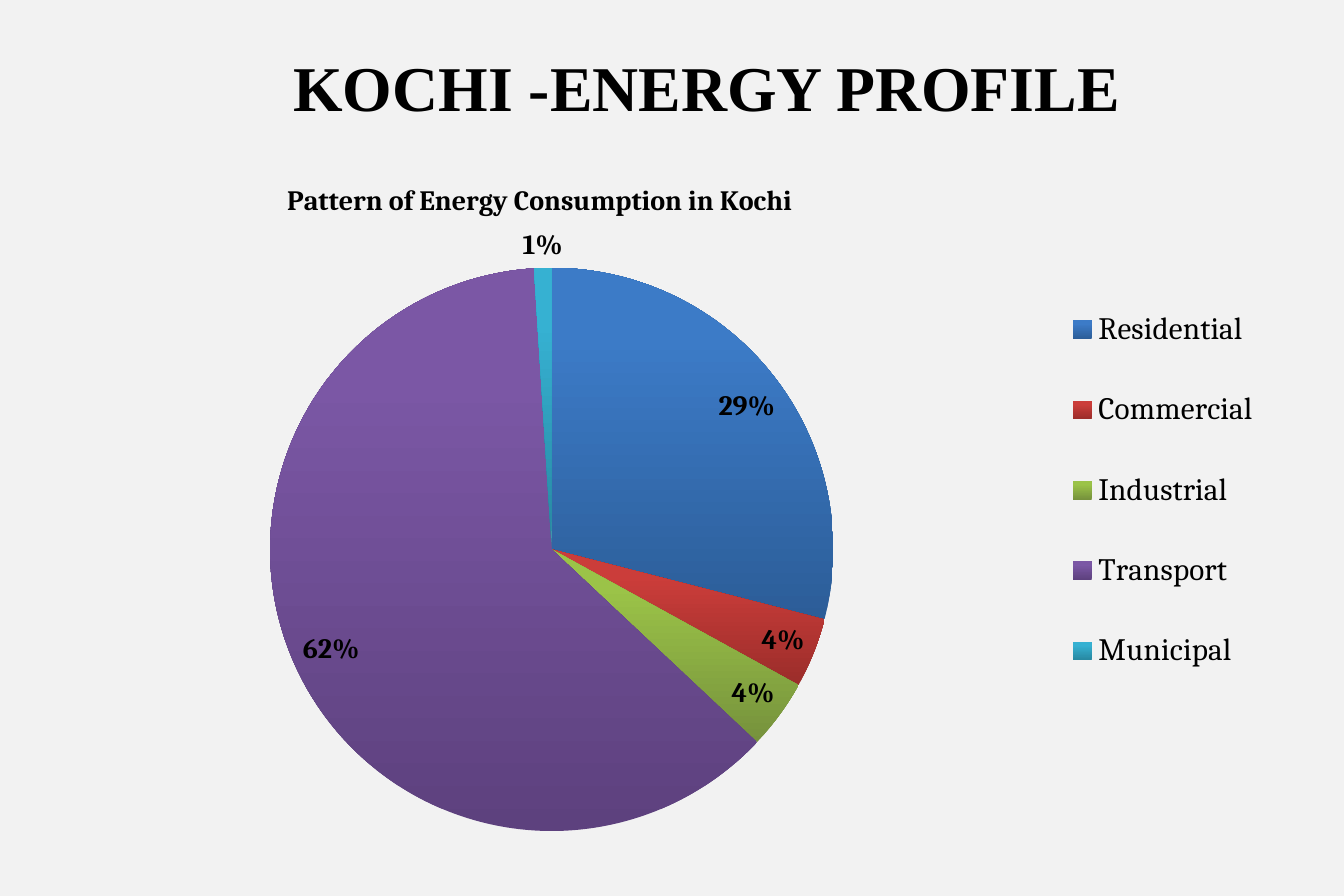
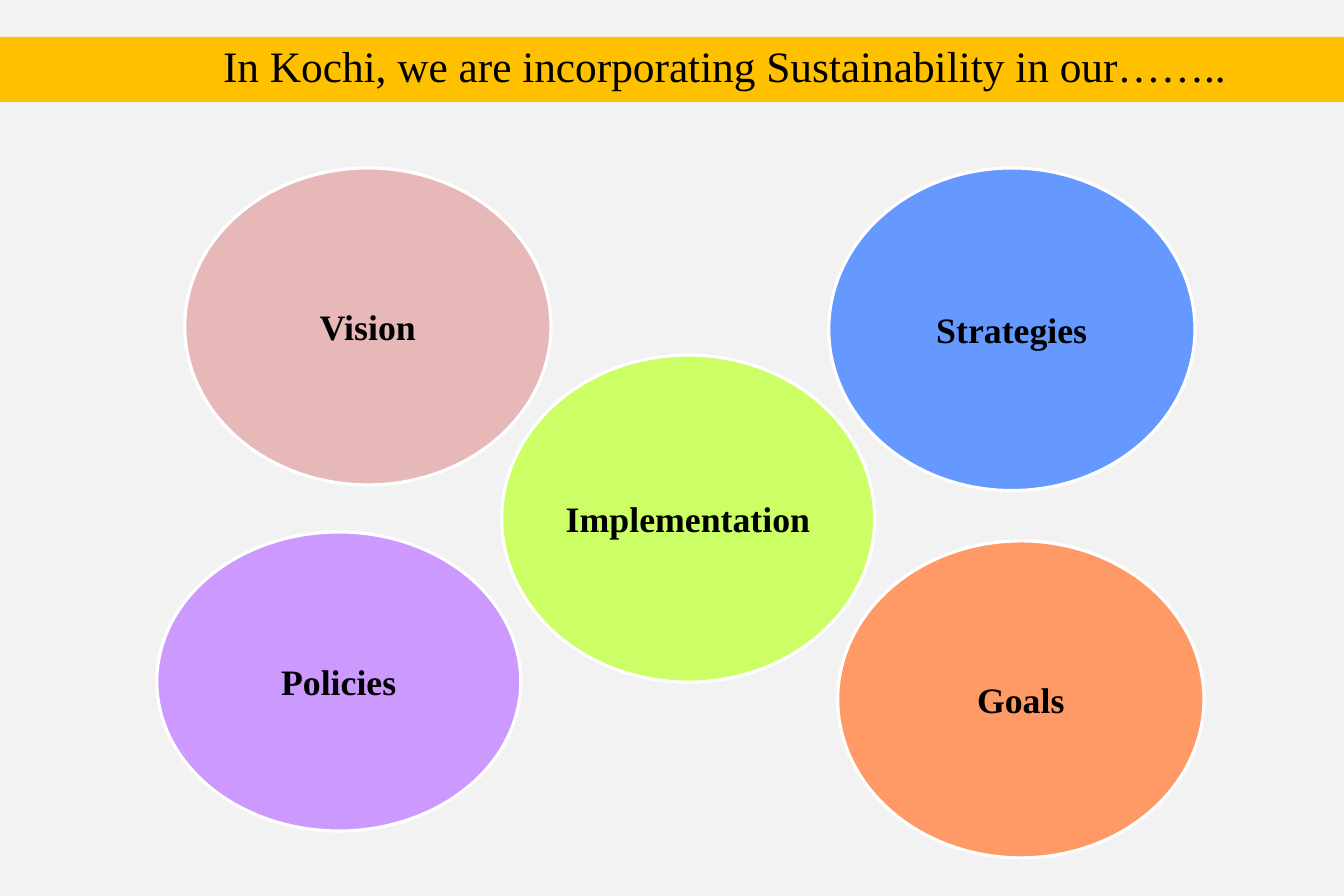
from pptx import Presentation
from pptx.chart.data import CategoryChartData
from pptx.dml.color import RGBColor
from pptx.enum.chart import XL_CHART_TYPE, XL_LABEL_POSITION, XL_LEGEND_POSITION
from pptx.enum.shapes import MSO_SHAPE
from pptx.enum.text import MSO_ANCHOR, PP_ALIGN
from pptx.oxml import parse_xml
from pptx.oxml.ns import nsdecls
from pptx.util import Inches, Pt

BACKGROUND = RGBColor(0xF2, 0xF2, 0xF2)
BLACK = RGBColor(0, 0, 0)
WHITE = RGBColor(0xFF, 0xFF, 0xFF)
AMBER = RGBColor(0xFF, 0xC0, 0x00)
LIME = RGBColor(0xCC, 0xFF, 0x66)
BLUE = RGBColor(0x66, 0x99, 0xFF)
LILAC = RGBColor(0xCC, 0x99, 0xFF)
ORANGE = RGBColor(0xFF, 0x99, 0x66)
ROSE = RGBColor(0xE6, 0xB9, 0xB8)
PIE_GRADIENTS = [
    (RGBColor(0x2C, 0x5D, 0x98), RGBColor(0x3C, 0x7B, 0xC7)),
    (RGBColor(0x9B, 0x2D, 0x2A), RGBColor(0xCB, 0x3D, 0x3A)),
    (RGBColor(0x76, 0x92, 0x3C), RGBColor(0x9B, 0xC3, 0x48)),
    (RGBColor(0x5D, 0x41, 0x7E), RGBColor(0x7B, 0x57, 0xA5)),
    (RGBColor(0x27, 0x87, 0xA0), RGBColor(0x36, 0xB1, 0xD2)),
]
SERIF = "Times New Roman"
CHART_SERIF = "Cambria"


class Deck:
    """Holds the shared style and the current slide."""

    def __init__(self):
        self.presentation = Presentation()
        self.presentation.slide_width = Inches(12)
        self.presentation.slide_height = Inches(8)
        self.fill(self.presentation.slide_master.background, BACKGROUND)
        self.slide = None

    def new_slide(self):
        self.slide = self.presentation.slides.add_slide(self.presentation.slide_layouts[6])

    def fill(self, target, color):
        target.fill.solid()
        target.fill.fore_color.rgb = color

    def style_font(self, font, size, name=SERIF, bold=False):
        for attribute, value in {"size": Pt(size), "name": name, "bold": bold}.items():
            setattr(font, attribute, value)
        font.color.rgb = BLACK

    def set_text(self, shape, text, size, bold, margins=(0.11, 0.06)):
        frame = shape.text_frame
        side, end = (Inches(margin) for margin in margins)
        settings = {
            "word_wrap": True, "vertical_anchor": MSO_ANCHOR.MIDDLE,
            "margin_left": side, "margin_right": side,
            "margin_top": end, "margin_bottom": end,
        }
        for attribute, value in settings.items():
            setattr(frame, attribute, value)
        paragraph = frame.paragraphs[0]
        paragraph.alignment = PP_ALIGN.CENTER
        run = paragraph.add_run()
        run.text = text
        self.style_font(run.font, size, bold=bold)

    def title(self, text, box, size, bold=False):
        shape = self.slide.shapes.add_textbox(*map(Inches, box))
        self.set_text(shape, text, size, bold)

    def shape(self, kind, box, color, outline=None):
        shape = self.slide.shapes.add_shape(kind, *map(Inches, box))
        shape.shadow.inherit = False
        self.fill(shape, color)
        if outline is None:
            shape.line.fill.background()
        else:
            shape.line.color.rgb = outline
            shape.line.width = Pt(2)
        return shape

    def band(self, box, color):
        self.shape(MSO_SHAPE.RECTANGLE, box, color)

    def bubble(self, text, box, color):
        shape = self.shape(MSO_SHAPE.OVAL, box, color, WHITE)
        self.set_text(shape, text, 23, True, (0.03, 0.03))

    def place(self, chart, part, after, **position):
        element = chart.element.xpath(f"c:chart/c:{part}")[0]
        for layout in element.xpath("c:layout"):
            element.remove(layout)
        target = '<c:layoutTarget val="inner"/>' if part == "plotArea" else ""
        modes = "".join(f'<c:{key}Mode val="edge"/>' for key in "xy")
        values = "".join(f'<c:{key} val="{value}"/>' for key, value in position.items())
        layout = parse_xml(
            f"<c:layout {nsdecls('c')}><c:manualLayout>{target}{modes}{values}"
            "</c:manualLayout></c:layout>"
        )
        index = element.index(element.xpath(f"c:{after}")[0]) + 1 if after else 0
        element.insert(index, layout)

    def pie(self, title, box, shares):
        data = CategoryChartData()
        data.categories = list(shares)
        data.add_series("Series 1", list(shares.values()))
        chart = self.slide.shapes.add_chart(
            XL_CHART_TYPE.PIE, *map(Inches, box), data
        ).chart
        self.style_font(chart.font, 10, "Calibri")

        chart.has_title = True
        frame = chart.chart_title.text_frame
        frame.text = title
        self.style_font(frame.paragraphs[0].runs[0].font, 18, CHART_SERIF, True)
        chart.has_legend = True
        chart.legend.position = XL_LEGEND_POSITION.RIGHT
        chart.legend.include_in_layout = False
        self.style_font(chart.legend.font, 20, CHART_SERIF)

        plot = chart.plots[0]
        plot.vary_by_categories = True
        series = plot.series[0]
        for index, colors in enumerate(PIE_GRADIENTS):
            fill = series.points[index].format.fill
            fill.gradient()
            fill.gradient_angle = 90
            for stop, color, position in zip(fill.gradient_stops, colors, (0, 0.8)):
                stop.color.rgb = color
                stop.position = position

        labels = series.data_labels
        settings = {
            "show_percentage": True, "show_value": False, "number_format": "0%",
            "number_format_is_linked": False, "position": XL_LABEL_POSITION.BEST_FIT,
        }
        for attribute, value in settings.items():
            setattr(labels, attribute, value)
        self.style_font(labels.font, 18, CHART_SERIF, True)

        self.place(chart, "title", "tx", x=0.17, y=0.04)
        self.place(chart, "plotArea", None, x=0.16, y=0.17, w=0.47, h=0.81)
        self.place(chart, "legend", "legendPos", x=0.82, y=0.17, w=0.17, h=0.64)


def main():
    deck = Deck()

    deck.new_slide()
    deck.pie(
        "Pattern of Energy Consumption in Kochi",
        (0.7, 1.33, 10.7, 6.22),
        {"Residential": 29, "Commercial": 4, "Industrial": 4, "Transport": 62, "Municipal": 1},
    )
    deck.title("KOCHI -ENERGY PROFILE", (2.38, 0.44, 7.87, 0.66), 41, True)

    deck.new_slide()
    deck.band((0, 0.33, 12, 0.58), AMBER)
    deck.title(
        "In Kochi, we are incorporating Sustainability in our……..",
        (0.87, 0.25, 11.2, 0.66), 27.9,
    )
    for text, box, color in [
        ("Implementation", (4.48, 3.17, 3.33, 2.92), LIME),
        ("Strategies", (7.4, 1.5, 3.27, 2.88), BLUE),
        ("Policies", (1.4, 4.75, 3.25, 2.67), LILAC),
        ("Goals", (7.48, 4.83, 3.27, 2.83), ORANGE),
        ("Vision", (1.65, 1.5, 3.27, 2.83), ROSE),
    ]:
        deck.bubble(text, box, color)

    deck.presentation.save("out.pptx")


if __name__ == "__main__":
    main()
